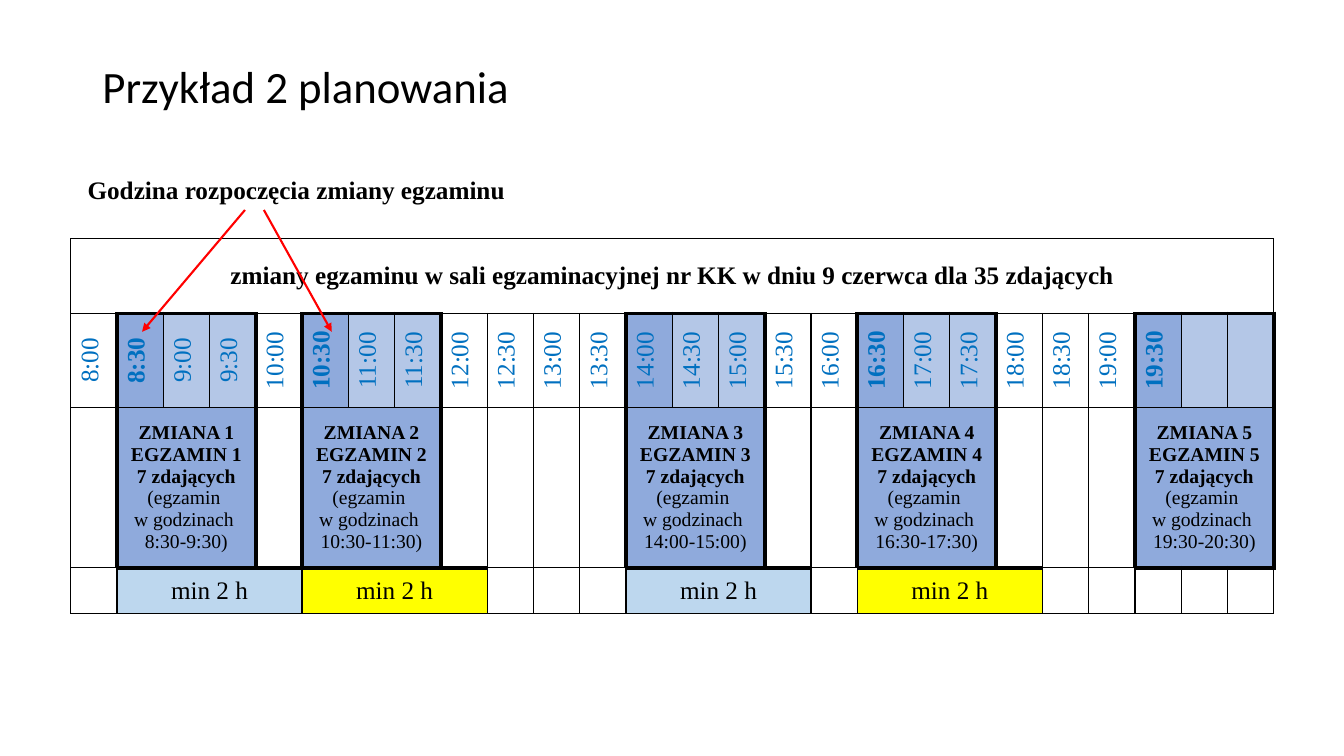
from dataclasses import dataclass

import lxml.etree
import pptx
import pptx.dml.color
import pptx.enum.shapes
import pptx.enum.text
import pptx.oxml.ns
import pptx.table
import pptx.text.text
import pptx.util

Pt = pptx.util.Pt
qn = pptx.oxml.ns.qn
MIDDLE = pptx.enum.text.MSO_ANCHOR.MIDDLE
CENTER = pptx.enum.text.PP_ALIGN.CENTER

SERIF = "Times New Roman"
BLACK, WHITE, RED, HOUR_BLUE = "000000", "FFFFFF", "FF0000", "0070C0"
SHIFT_BLUE, LATER_BLUE = "8FAADC", "B4C7E7"
GAP_BLUE, GAP_YELLOW = "BDD7EE", "FFFF00"
HEADING, HOURS, SHIFTS, GAPS = range(4)
COLUMNS, HOUR_COLUMNS, SHIFT_SPAN, GAP_SPAN = 26, 24, 3, 4
COLUMN_WIDTH = 33.06
ROW_HEIGHTS = (53.5, 67, 114.5, 33)


@dataclass(frozen=True)
class Shift:
    number: int
    start: int
    bold_hour: bool = True
    gap_color: str = ""

    def covers(self, column: int) -> bool:
        return self.start <= column < self.start + SHIFT_SPAN

    def gap_covers(self, column: int) -> bool:
        return bool(self.gap_color) and self.start <= column < self.start + GAP_SPAN


@dataclass(frozen=True)
class Arrow:
    start: tuple[float, float]
    end: tuple[float, float]


EXAM_SHIFTS = (
    Shift(1, 1, gap_color=GAP_BLUE),
    Shift(2, 5, gap_color=GAP_YELLOW),
    Shift(3, 12, bold_hour=False, gap_color=GAP_BLUE),
    Shift(4, 17, gap_color=GAP_YELLOW),
    Shift(5, 23),
)
SHIFT_EDGES = {edge for shift in EXAM_SHIFTS
               for edge in (shift.start, shift.start + SHIFT_SPAN)}
START_ARROWS = (
    Arrow((175, 150), (101.5, 237)),
    Arrow((188.5, 150), (237, 237)),
)


def rgb(color: str) -> pptx.dml.color.RGBColor:
    return pptx.dml.color.RGBColor.from_string(color)


def clock(column: int) -> str:
    return f"{8 + column // 2}:{column % 2 * 30:02d}"


def style(paragraph: pptx.text.text._Paragraph, size: float, color: str = BLACK,
          bold: bool = False, font: str = SERIF) -> None:
    paragraph.font.name = font
    paragraph.font.size = Pt(size)
    paragraph.font.bold = bold
    paragraph.font.color.rgb = rgb(color)


def fill_cell(cell: pptx.table._Cell, color: str) -> None:
    cell.fill.solid()
    cell.fill.fore_color.rgb = rgb(color)


def write_cell(cell: pptx.table._Cell, text: str, size: float,
               color: str = BLACK, bold_lines: int = 0) -> None:
    cell.text = text
    for index, paragraph in enumerate(cell.text_frame.paragraphs):
        paragraph.alignment = CENTER
        style(paragraph, size, color, index < bold_lines)


def draw_borders(cell: pptx.table._Cell, row: int, column: int) -> None:
    in_shift = any(shift.covers(column) for shift in EXAM_SHIFTS)
    in_gap = any(shift.gap_covers(column) for shift in EXAM_SHIFTS)
    beside_shift = row in (HOURS, SHIFTS)
    right_edge = column + (cell.span_width if cell.is_merge_origin else 1)
    thick = {
        "L": beside_shift and column in SHIFT_EDGES,
        "R": beside_shift and right_edge in SHIFT_EDGES,
        "T": (row == HOURS and in_shift) or (row == GAPS and (in_shift or in_gap)),
        "B": row == SHIFTS and in_shift,
    }
    properties = cell._tc.get_or_add_tcPr()
    for side, is_thick in thick.items():
        line = lxml.etree.SubElement(properties, qn(f"a:ln{side}"),
                                     w=str(Pt(3 if is_thick else 1)))
        solid = lxml.etree.SubElement(line, qn("a:solidFill"))
        lxml.etree.SubElement(solid, qn("a:srgbClr"), val=BLACK)


def add_timetable(slide: pptx.slide.Slide) -> None:
    timetable = slide.shapes.add_table(
        len(ROW_HEIGHTS), COLUMNS, Pt(50.5), Pt(170.5),
        Pt(COLUMN_WIDTH * COLUMNS), Pt(sum(ROW_HEIGHTS))).table
    timetable.first_row = False
    timetable.horz_banding = False
    for column in timetable.columns:
        column.width = Pt(COLUMN_WIDTH)
    for row, height in zip(timetable.rows, ROW_HEIGHTS):
        row.height = Pt(height)

    timetable.cell(HEADING, 0).merge(timetable.cell(HEADING, COLUMNS - 1))
    for shift in EXAM_SHIFTS:
        timetable.cell(SHIFTS, shift.start).merge(
            timetable.cell(SHIFTS, shift.start + SHIFT_SPAN - 1))
        if shift.gap_color:
            timetable.cell(GAPS, shift.start).merge(
                timetable.cell(GAPS, shift.start + GAP_SPAN - 1))

    for row in range(len(ROW_HEIGHTS)):
        for column in range(COLUMNS):
            cell = timetable.cell(row, column)
            cell.vertical_anchor = MIDDLE
            draw_borders(cell, row, column)
            fill_cell(cell, WHITE)

    write_cell(timetable.cell(HEADING, 0),
               "zmiany egzaminu w sali egzaminacyjnej nr KK w dniu 9 czerwca dla 35 zdających",
               18, bold_lines=1)
    bold_starts = {shift.start for shift in EXAM_SHIFTS if shift.bold_hour}
    for column in range(HOUR_COLUMNS):
        hour = timetable.cell(HOURS, column)
        hour._tc.get_or_add_tcPr().set("vert", "vert270")
        write_cell(hour, clock(column), 18, HOUR_BLUE, int(column in bold_starts))

    for shift in EXAM_SHIFTS:
        for column in range(shift.start, shift.start + SHIFT_SPAN):
            fill_cell(timetable.cell(HOURS, column),
                      SHIFT_BLUE if column == shift.start else LATER_BLUE)
        details = timetable.cell(SHIFTS, shift.start)
        fill_cell(details, SHIFT_BLUE)
        write_cell(details,
                   f"ZMIANA {shift.number} EGZAMIN {shift.number}\n7 zdających\n"
                   "(egzamin \vw godzinach \n"
                   f"{clock(shift.start)}-{clock(shift.start + 2)})",
                   14, bold_lines=2)
        if shift.gap_color:
            gap = timetable.cell(GAPS, shift.start)
            fill_cell(gap, shift.gap_color)
            write_cell(gap, "min 2 h", 18)


def add_start_label(slide: pptx.slide.Slide) -> None:
    label = slide.shapes.add_textbox(Pt(55.5), Pt(121), Pt(413), Pt(29)).text_frame
    label.word_wrap = True
    label.text = "Godzina rozpoczęcia zmiany egzaminu"
    style(label.paragraphs[0], 18, bold=True)


def add_arrow(slide: pptx.slide.Slide, arrow: Arrow) -> None:
    pointer = slide.shapes.add_connector(
        pptx.enum.shapes.MSO_CONNECTOR.STRAIGHT,
        *(Pt(length) for length in arrow.start + arrow.end))
    pointer.line.color.rgb = rgb(RED)
    pointer.line.width = Pt(1.5)
    lxml.etree.SubElement(pointer.line._get_or_add_ln(), qn("a:tailEnd"), type="triangle")
    lxml.etree.SubElement(pointer._element.spPr, qn("a:effectLst"))


def format_title(slide: pptx.slide.Slide) -> None:
    title = slide.shapes.title
    title.left, title.top, title.width, title.height = Pt(66), Pt(29), Pt(828), Pt(69)
    title.text_frame.text = "Przykład 2 planowania"
    title.text_frame.vertical_anchor = MIDDLE
    heading = title.text_frame.paragraphs[0]
    heading.alignment = pptx.enum.text.PP_ALIGN.LEFT
    heading.line_spacing = 0.9
    style(heading, 32, font="Calibri")


def main() -> None:
    presentation = pptx.Presentation()
    presentation.slide_width, presentation.slide_height = Pt(960), Pt(540)
    slide = presentation.slides.add_slide(presentation.slide_layouts[5])
    format_title(slide)
    add_timetable(slide)
    add_start_label(slide)
    for arrow in START_ARROWS:
        add_arrow(slide, arrow)
    presentation.save("out.pptx")


if __name__ == "__main__":
    main()
